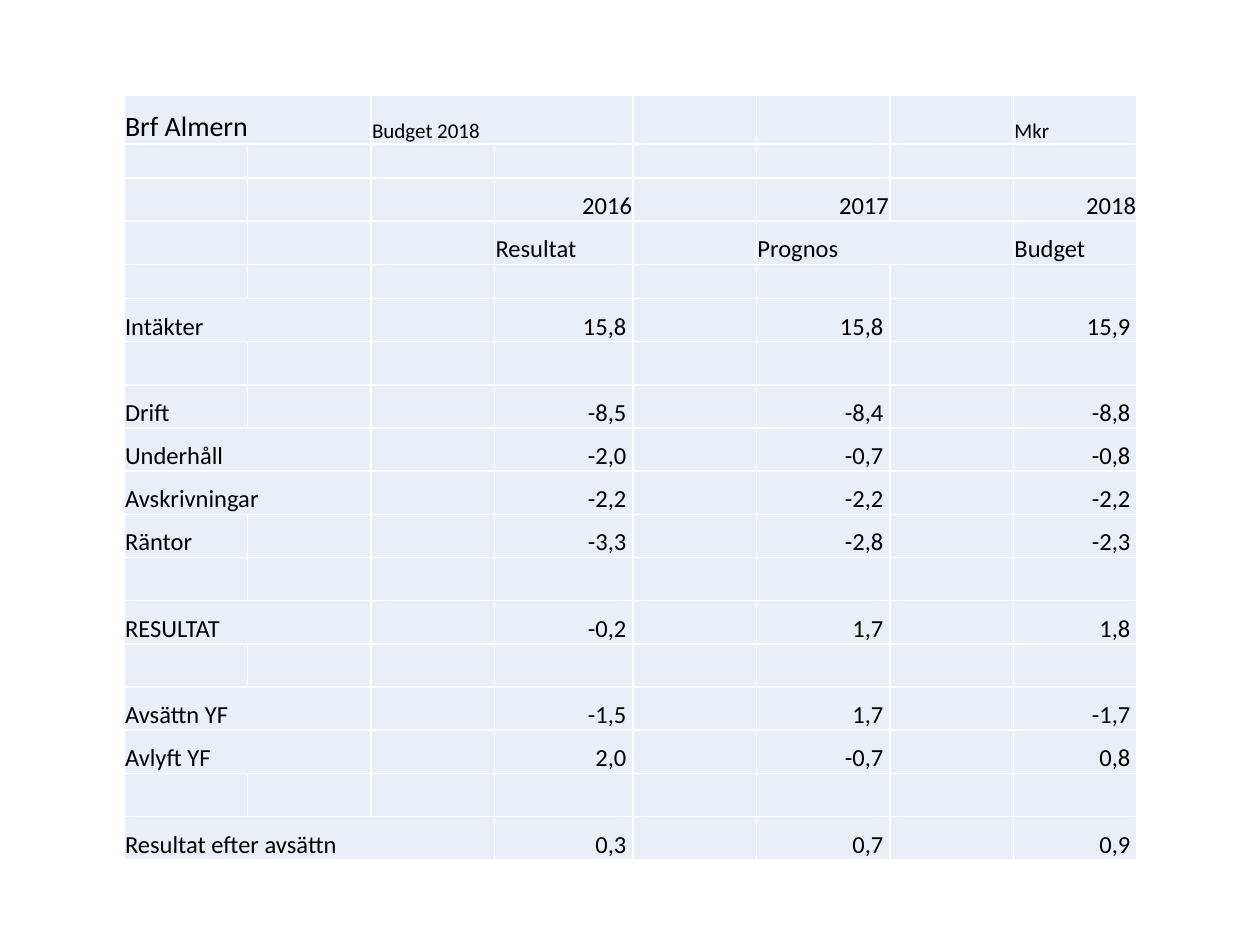
import pptx
import pptx.dml.color
import pptx.enum.text
import pptx.oxml.ns
import pptx.util
from lxml import etree

Cm, Pt = pptx.util.Cm, pptx.util.Pt
RGBColor = pptx.dml.color.RGBColor
PP_ALIGN = pptx.enum.text.PP_ALIGN
qn = pptx.oxml.ns.qn

PALE_BLUE = RGBColor(0xEA, 0xEF, 0xF7)
WHITE = RGBColor(0xFF, 0xFF, 0xFF)
BLACK = RGBColor(0, 0, 0)
FONT = "Calibri"
BODY_SIZE = 14

COL_WIDTHS = [2.49, 2.49, 2.49, 2.79, 2.49, 2.69, 2.49, 2.49]
ROW_HEIGHT, SPACER_HEIGHT, TITLE_HEIGHT = 0.87, 0.69, 0.97
YEAR_COLS = (3, 5, 7)

# Row number: label, columns the label spans, result, forecast and budget
LINES = {
    5: ("Intäkter", 2, "15,8", "15,8", "15,9"),
    7: ("Drift", 1, "-8,5", "-8,4", "-8,8"),
    8: ("Underhåll", 2, "-2,0", "-0,7", "-0,8"),
    9: ("Avskrivningar", 2, "-2,2", "-2,2", "-2,2"),
    10: ("Räntor", 1, "-3,3", "-2,8", "-2,3"),
    12: ("RESULTAT", 2, "-0,2", "1,7", "1,8"),
    14: ("Avsättn YF", 2, "-1,5", "1,7", "-1,7"),
    15: ("Avlyft YF", 2, "2,0", "-0,7", "0,8"),
    17: ("Resultat efter avsättn", 3, "0,3", "0,7", "0,9"),
}
ROW_HEIGHTS = [TITLE_HEIGHT] + [
    SPACER_HEIGHT if row in (1, 4) else ROW_HEIGHT for row in range(1, 18)]


def style_cell(cell):
    cell.fill.solid()
    cell.fill.fore_color.rgb = PALE_BLUE
    cell.vertical_anchor = pptx.enum.text.MSO_ANCHOR.BOTTOM
    cell.margin_left = cell.margin_right = cell.margin_top = Cm(0.02)
    cell.margin_bottom = 0
    # Borders come before the fill in the cell properties
    tcPr = cell._tc.get_or_add_tcPr()
    for i, side in enumerate(("lnL", "lnR", "lnT", "lnB")):
        ln = etree.Element(qn(f"a:{side}"), w=str(Pt(1)))
        fill = etree.SubElement(ln, qn("a:solidFill"))
        etree.SubElement(fill, qn("a:srgbClr"), val=str(WHITE))
        tcPr.insert(i, ln)
    # Text size of an empty cell, so that it does not stretch its row
    p = cell.text_frame.paragraphs[0]
    etree.SubElement(p._p, qn("a:endParaRPr"), sz=str(BODY_SIZE * 100))


def write(cell, text, size=BODY_SIZE, align=PP_ALIGN.LEFT):
    p = cell.text_frame.paragraphs[0]
    p.alignment = align
    r = p.add_run()
    r.text = text
    r.font.name = FONT
    r.font.size = Pt(size)
    r.font.color.rgb = BLACK


def add_budget_table(s, left, top, width, height):
    table = s.shapes.add_table(len(ROW_HEIGHTS), len(COL_WIDTHS),
                               left, top, width, height).table
    table.first_row = table.horz_banding = False
    for column, w in zip(table.columns, COL_WIDTHS):
        column.width = Cm(w)
    for row, h in zip(table.rows, ROW_HEIGHTS):
        row.height = Cm(h)
    for cell in table.iter_cells():
        style_cell(cell)

    def span(row, col, count):
        if count > 1:
            table.cell(row, col).merge(table.cell(row, col + count - 1))

    # Title row
    span(0, 0, 2)
    span(0, 2, 2)
    write(table.cell(0, 0), "Brf Almern", 16)
    write(table.cell(0, 2), "Budget 2018", 12)
    write(table.cell(0, 7), "Mkr", 12)

    # Column headings
    span(3, 5, 2)
    headings = (("2016", "Resultat"), ("2017", "Prognos"), ("2018", "Budget"))
    for col, (year, kind) in zip(YEAR_COLS, headings):
        write(table.cell(2, col), year, align=PP_ALIGN.RIGHT)
        write(table.cell(3, col), kind)

    # Budget lines, with a space after each amount
    for row, (label, count, *amounts) in LINES.items():
        span(row, 0, count)
        write(table.cell(row, 0), label)
        for col, amount in zip(YEAR_COLS, amounts):
            write(table.cell(row, col), f"{amount} ", align=PP_ALIGN.RIGHT)


def main():
    prs = pptx.Presentation()
    prs.slide_width, prs.slide_height = Cm(25.4), Cm(19.05)
    s = prs.slides.add_slide(prs.slide_layouts[6])
    add_budget_table(s, Cm(2.5), Cm(1.93),
                     Cm(sum(COL_WIDTHS)), Cm(sum(ROW_HEIGHTS)))
    prs.save("out.pptx")


if __name__ == "__main__":
    main()
